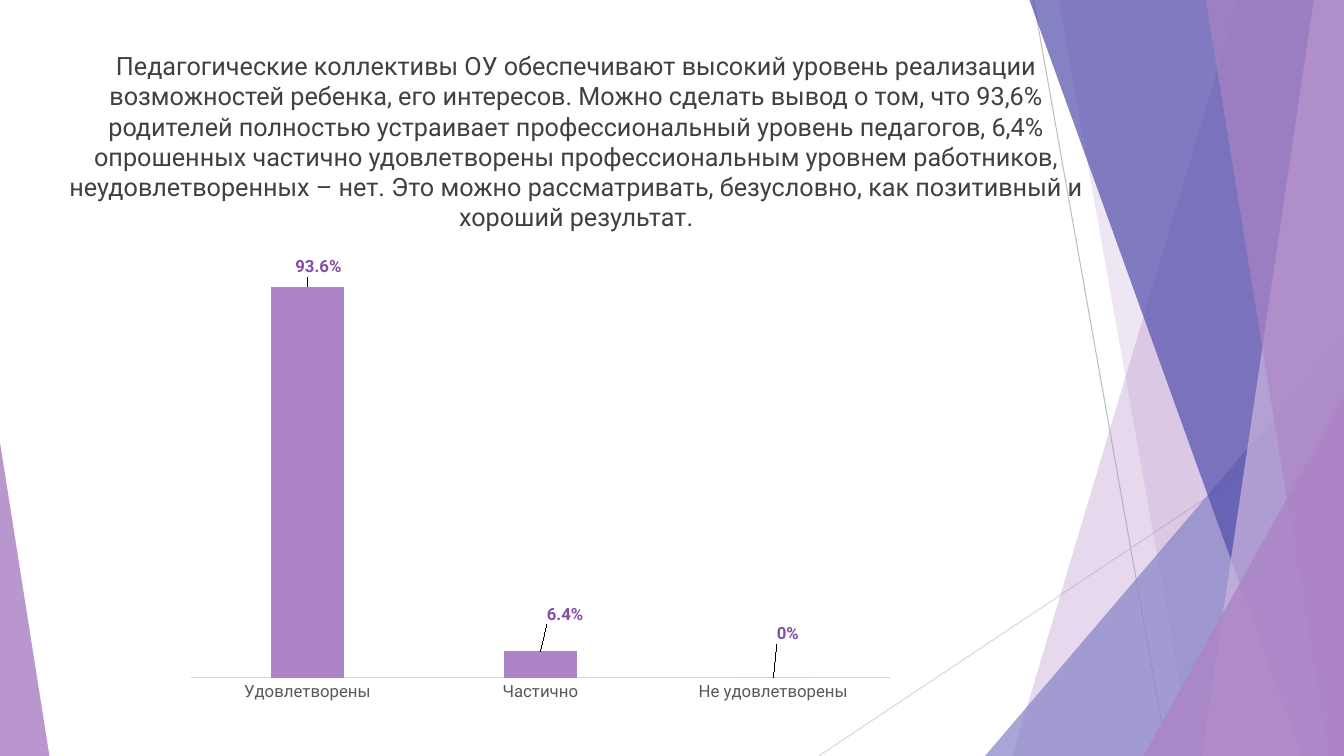
from lxml import etree
from pptx import Presentation
from pptx.chart.data import CategoryChartData
from pptx.dml.color import RGBColor
from pptx.enum.chart import XL_CHART_TYPE, XL_LABEL_POSITION, XL_TICK_MARK
from pptx.enum.shapes import MSO_CONNECTOR, MSO_SHAPE
from pptx.enum.text import PP_ALIGN
from pptx.oxml.ns import qn
from pptx.util import Inches, Pt

W, H = 13.33, 7.5
FONT = "Roboto"
C15 = "http://schemas.microsoft.com/office/drawing/2012/chart"
C15_URI = "{CE6537A1-D6FC-4f65-9D91-7224C49458BB}"
COLORS = {
    "violet": "AD84C6", "pale": "CEB5DD", "blue": "8784C7", "indigo": "524EAB",
    "text": "404040", "axis_text": "595959", "label": "864EA8",
    "dark_line": "BFBFBF", "light_line": "D9D9D9",
}
TEXT = (
    "Педагогические коллективы ОУ обеспечивают высокий уровень реализации "
    "возможностей ребенка, его интересов. Можно сделать вывод о том, что 93,6% "
    "родителей полностью устраивает профессиональный уровень педагогов, 6,4% "
    "опрошенных частично удовлетворены профессиональным уровнем работников, "
    "неудовлетворенных – нет. Это можно рассматривать, безусловно, как позитивный "
    "и хороший результат."
)
ANSWERS = [
    ("Удовлетворены", 0.936, "93.6%", (0.015, -0.013)),
    ("Частично", 0.064, "6.4%", (0.034, -0.05)),
    ("Не удовлетворены", 0, "0%", (0.02, -0.065)),
]
LINES = [
    ((10.25, 0), (11.58, H), "dark_line"),
    ((W, 4.03), (8.12, H), "light_line"),
]
FACETS = [
    ("band", (12.28, 10.04), "violet", 30),
    ("band", (10.5, 11.83), "violet", 20),
    ("triangle", (9.77, 3.33, 3.56, 1), "blue", 72),
    ("band", (10.21, 12.91), "indigo", 70),
    ("band", (13.03, 11.92), "pale", 70),
    ("band", (11.96, 13.18), "violet", 65),
    ("triangle", (11.34, 3.93, 1.99, 1), "violet", 80),
    ("triangle", (0, 4.39, 0.49, 0), "violet", 85),
]
PLOT = {"x": 0.02, "y": 0.02, "w": 0.96, "h": 0.909}


def rgb(name):
    return RGBColor.from_string(COLORS[name])


def set_font(font, size, color, bold=False):
    font.color.rgb = rgb(color)
    for key, value in {"name": FONT, "size": Pt(size), "bold": bold}.items():
        setattr(font, key, value)


def add_line(s, start, end, color):
    ln = s.shapes.add_connector(
        MSO_CONNECTOR.STRAIGHT, *[Inches(v) for v in start + end])
    ln.line.color.rgb = rgb(color)
    ln.line.width = Pt(0.75)
    etree.SubElement(ln._element.spPr, qn("a:effectLst"))


def add_facet(s, kind, geometry, color, opacity):
    if kind == "band":
        top, bottom = geometry
        fb = s.shapes.build_freeform(Inches(top), 0)
        corners = [(W, 0), (W, H), (bottom, H)]
        fb.add_line_segments([(Inches(x), Inches(y)) for x, y in corners], close=True)
        sp = fb.convert_to_shape()
    else:
        left, top, width, apex = geometry
        sp = s.shapes.add_shape(
            MSO_SHAPE.ISOSCELES_TRIANGLE,
            *[Inches(v) for v in (left, top, width, H - top)])
        sp.adjustments[0] = apex
    sp.shadow.inherit = False
    sp.fill.solid()
    sp.fill.fore_color.rgb = rgb(color)
    sp.line.fill.background()
    fill = sp._element.spPr.find(qn("a:solidFill"))
    etree.SubElement(fill[0], qn("a:alpha"), val=str(opacity * 1000))


def add_text(s):
    sp = s.shapes.add_textbox(*[Inches(v) for v in (0.51, 0.45, 10.41, 2.32)])
    tf = sp.text_frame
    tf.word_wrap = True
    p = tf.paragraphs[0]
    p.alignment = PP_ALIGN.CENTER
    p.space_before = Pt(10)
    r = p.add_run()
    r.text = TEXT
    set_font(r.font, 18, "text")


def make_layout(values):
    layout = etree.Element(qn("c:layout"))
    manual = etree.SubElement(layout, qn("c:manualLayout"))
    for tag, value in values.items():
        etree.SubElement(manual, qn(f"c:{tag}"), val=str(value))
    return layout


def hide_leader_lines(labels):
    ext_list = etree.SubElement(labels, qn("c:extLst"))
    ext = etree.SubElement(ext_list, qn("c:ext"), uri=C15_URI, nsmap={"c15": C15})
    etree.SubElement(ext, f"{{{C15}}}showLeaderLines", val="0")


def add_answers_chart(s):
    cd = CategoryChartData(number_format="0.00%")
    cd.categories = [a[0] for a in ANSWERS]
    cd.add_series("Series 1", [a[1] for a in ANSWERS])
    chart = s.shapes.add_chart(
        XL_CHART_TYPE.COLUMN_CLUSTERED,
        *[Inches(v) for v in (1.75, 2.49, 7.22, 4.56)], cd).chart
    chart.has_legend = chart.has_title = False
    chart.font.name = FONT
    chart.font.size = Pt(10)

    cat, val = chart.category_axis, chart.value_axis
    cat.major_tick_mark = cat.minor_tick_mark = XL_TICK_MARK.NONE
    cat.format.line.color.rgb = rgb("light_line")
    cat.format.line.width = Pt(0.75)
    set_font(cat.tick_labels.font, 12, "axis_text")
    val.minimum_scale, val.maximum_scale = 0, 1
    val.has_major_gridlines = val.visible = False
    val.tick_labels.number_format = "0.00%"
    val.tick_labels.number_format_is_linked = False

    plot = chart.plots[0]
    plot.gap_width = 219
    plot.vary_by_categories = False
    series = plot.series[0]
    series.format.fill.solid()
    series.format.fill.fore_color.rgb = rgb("violet")

    labels = series.data_labels
    labels.show_value = True
    labels.number_format = "0.0%"
    labels.number_format_is_linked = False
    labels.position = XL_LABEL_POSITION.OUTSIDE_END
    set_font(labels.font, 12, "text")
    for i, (_, _, text, (dx, dy)) in enumerate(ANSWERS):
        label = series.points[i].data_label
        r = label.text_frame.paragraphs[0].add_run()
        r.text = text
        set_font(r.font, 12, "label", True)
        label.position = XL_LABEL_POSITION.OUTSIDE_END
        d = labels._element.findall(qn("c:dLbl"))[i]
        d.find(qn("c:idx")).addnext(make_layout({"x": dx, "y": dy}))
    hide_leader_lines(labels._element)

    area = chart._chartSpace.chart.plotArea
    for old in area.findall(qn("c:layout")):
        area.remove(old)
    modes = {"layoutTarget": "inner", "xMode": "edge", "yMode": "edge"}
    area.insert(0, make_layout({**modes, **PLOT}))


def main():
    prs = Presentation()
    prs.slide_width, prs.slide_height = Inches(W), Inches(H)
    s = prs.slides.add_slide(prs.slide_layouts[6])
    for line in LINES:
        add_line(s, *line)
    for facet in FACETS:
        add_facet(s, *facet)
    add_text(s)
    add_answers_chart(s)
    prs.save("out.pptx")


if __name__ == "__main__":
    main()
